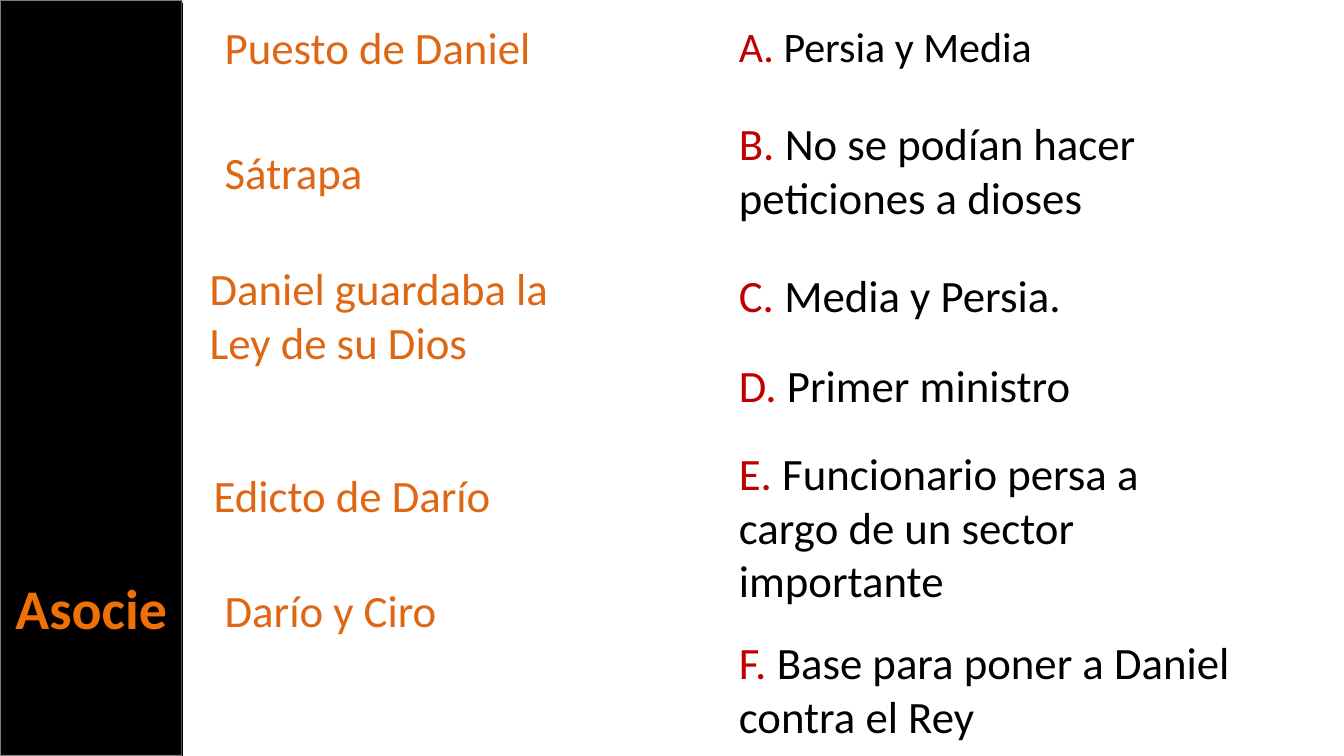
from lxml import etree
from pptx import Presentation
from pptx import util as u
from pptx.dml.color import RGBColor
from pptx.enum import shapes, text
from pptx.oxml import ns

BLACK = RGBColor(0x00, 0x00, 0x00)
PALE = RGBColor(0xF9, 0xF9, 0xF9)
ORANGE = RGBColor(0xDF, 0x66, 0x13)
BRIGHT_ORANGE = RGBColor(0xEE, 0x70, 0x08)
RED = RGBColor(0xC0, 0x00, 0x00)

BAR_WIDTH = 1.81
ANSWER_LEFT = 7.23

TERMS = [
    ("Puesto de Daniel", 2.13, 0.15, 4.59, 0.64),
    ("Sátrapa", 2.13, 1.39, 3.84, 0.64),
    ("Daniel guardaba la Ley de su Dios", 1.98, 2.54, 4.13, 1.18),
    ("Edicto de Darío", 2.02, 4.59, 4.06, 0.64),
    ("Darío y Ciro", 2.13, 5.73, 4.26, 0.64),
]

ANSWERS = [
    ("A. ", "Persia y Media", 0.15, 4.18, 0.61, 30),
    ("B. ", "No se podían hacer peticiones a dioses", 1.1, 4.92, 1.18, 32),
    ("C. ", "Media y Persia.", 2.61, 4.7, 0.64, 32),
    ("D. ", "Primer ministro", 3.5, 5.51, 0.64, 32),
    ("E. ", "Funcionario persa a cargo de un sector importante", 4.37, 5.17, 1.72, 32),
    ("F. ", "Base para poner a Daniel contra el Rey", 6.25, 5.59, 1.18, 32),
]


def add_span(para, words, font="Calibri", size=32, color=BLACK, bold=False):
    span = para.add_run()
    span.text = words
    span.font.name = font
    span.font.size = u.Pt(size)
    span.font.color.rgb = color
    span.font.bold = bold


class Slide:
    def __init__(self, deck, font="Calibri"):
        self.page = deck.slides.add_slide(deck.slide_layouts[6])
        self.font = font

    def bar(self, left, top, width, height, line_alpha):
        box = self.page.shapes.add_shape(
            shapes.MSO_SHAPE.RECTANGLE, *map(u.Inches, (left, top, width, height)))
        box.shadow.inherit = False
        box.fill.solid()
        box.fill.fore_color.rgb = BLACK
        box.line.color.rgb = PALE
        box.line.width = u.Pt(1.35)
        color = box.line._get_or_add_ln().find(".//" + ns.qn("a:srgbClr"))
        etree.SubElement(color, ns.qn("a:alpha"), val=str(line_alpha * 1000))

    def label(self, left, top, width, height, spans, align=text.PP_ALIGN.LEFT):
        box = self.page.shapes.add_textbox(*map(u.Inches, (left, top, width, height)))
        box.text_frame.word_wrap = True
        box.text_frame.auto_size = text.MSO_AUTO_SIZE.SHAPE_TO_FIT_TEXT
        para = box.text_frame.paragraphs[0]
        para.alignment = align
        for words, style in spans:
            add_span(para, words, font=self.font, **style)

    def rule(self, x1, y1, x2, y2):
        line = self.page.shapes.add_connector(
            shapes.MSO_CONNECTOR.STRAIGHT, *map(u.Inches, (x1, y1, x2, y2)))
        line.line.color.rgb = BLACK
        line.line.width = u.Pt(0.85)
        etree.SubElement(line._element.spPr, ns.qn("a:effectLst"))


def main():
    deck = Presentation()
    deck.slide_width = u.Inches(13.33)
    deck.slide_height = u.Inches(7.5)
    slide = Slide(deck)

    slide.bar(0, 0, BAR_WIDTH, 7.5, line_alpha=50)
    for term, left, top, width, height in TERMS:
        slide.label(left, top, width, height, [(term, {"color": ORANGE})])
    for letter, answer, top, width, height, size in ANSWERS:
        slide.label(ANSWER_LEFT, top, width, height, [
            (letter, {"size": size, "color": RED}),
            (answer, {"size": size}),
        ])
    slide.label(0, 5.64, BAR_WIDTH, 0.77,
                [("Asocie", {"size": 40, "color": BRIGHT_ORANGE, "bold": True})],
                align=text.PP_ALIGN.CENTER)
    slide.rule(BAR_WIDTH, 0.03, BAR_WIDTH, 7.5)

    deck.save("out.pptx")


if __name__ == "__main__":
    main()
